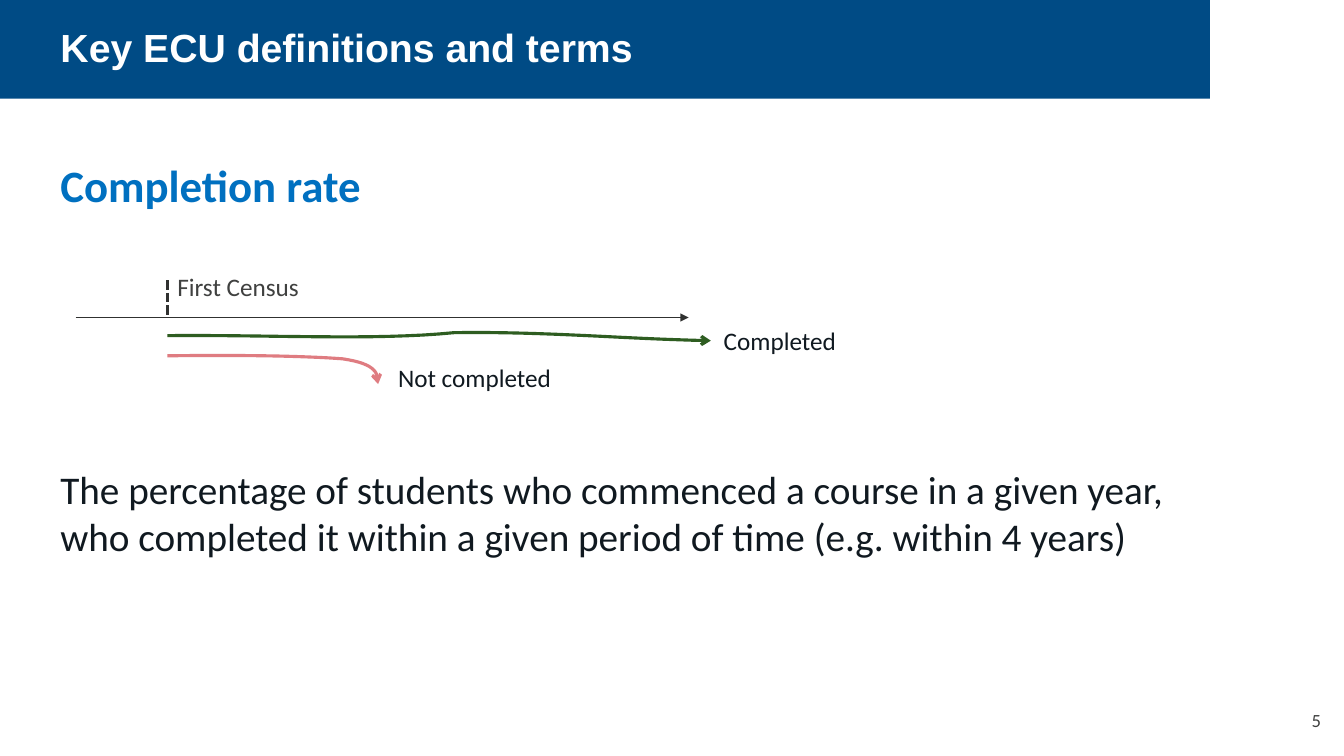
"""Build the completion rate definition slide."""
from dataclasses import dataclass

import lxml.etree
import pptx
import pptx.dml.color
import pptx.enum.dml
import pptx.enum.shapes
import pptx.enum.text
import pptx.oxml.ns
import pptx.util

Inches = pptx.util.Inches
Align = pptx.enum.text.PP_ALIGN
Point = tuple[float, float]

COLOURS = {
    "band": "004B85",
    "white": "FFFFFF",
    "heading": "0070C0",
    "body": "101920",
    "grey": "404140",
    "axis": "303130",
    "completed": "2E5D21",
    "not completed": "DF7C81",
}
CURVE_STEPS = 16


@dataclass
class Label:
    text: str
    left: float
    top: float
    width: float
    height: float
    size: float = 18
    colour: str = "body"
    bold: bool = False
    align: Align = Align.LEFT
    space_after: float = 0


@dataclass
class Pathway:
    colour: str
    start: Point
    beziers: list[tuple[Point, Point, Point]]


@dataclass
class Rule:
    start: Point
    end: Point
    width: float
    dashed: bool = False
    head: str = ""


LABELS = [
    Label("5", 12.5, 6.98, 0.7, 0.33, size=13.3, colour="grey", align=Align.RIGHT),
    Label("The percentage of students who commenced a course in a given year, \v"
          "who completed it within a given period of time (e.g. within 4 years)",
          0.5, 4.57, 12.36, 1.04, size=28, space_after=12),
    Label("First Census", 1.66, 2.64, 1.99, 0.4, colour="grey"),
    Label("Completed", 7.08, 3.18, 1.43, 0.41),
    Label("Not completed", 3.85, 3.54, 1.89, 0.41),
    Label("Completion rate", 0.5, 1.52, 8.24, 0.64, size=32, colour="heading", bold=True),
]
PATHWAYS = [
    Pathway("completed", (1.66, 3.33), [
        ((2.67, 3.32), (3.71, 3.38), (4.51, 3.3)),
        ((5.48, 3.29), (6.12, 3.36), (7.05, 3.38)),
    ]),
    Pathway("not completed", (1.66, 3.53), [
        ((2.33, 3.52), (3.02, 3.53), (3.4, 3.56)),
        ((3.74, 3.61), (3.75, 3.71), (3.75, 3.81)),
    ]),
]
RULES = [
    Rule((0.75, 3.15), (6.83, 3.15), 0.5, head="triangle"),
    Rule((1.66, 2.78), (1.66, 3.15), 2.25, dashed=True),
]


def colour(name: str) -> pptx.dml.color.RGBColor:
    return pptx.dml.color.RGBColor.from_string(COLOURS[name])


def write(frame, text: str, *, size: float, ink: str, font: str = "Calibri",
          bold: bool = False, align: Align = Align.LEFT,
          space_after: float = 0, line_spacing: float = 1.0) -> None:
    para = frame.paragraphs[0]
    para.text = text
    para.alignment = align
    para.space_before = pptx.util.Pt(0)
    para.space_after = pptx.util.Pt(space_after)
    para.line_spacing = line_spacing
    for span in para.runs:
        span.font.name = font
        span.font.size = pptx.util.Pt(size)
        span.font.bold = bold
        span.font.color.rgb = colour(ink)


def style_line(line, ink: str, width: float, head: str = "") -> None:
    line.color.rgb = colour(ink)
    line.width = pptx.util.Pt(width)
    if head:
        outline = line.color._xFill.getparent()
        lxml.etree.SubElement(outline, pptx.oxml.ns.qn("a:tailEnd"), type=head)


def add_title(page) -> None:
    title = page.shapes.title
    title.left, title.top = Inches(0.5), Inches(0)
    title.width, title.height = Inches(11.5), Inches(0.98)
    frame = title.text_frame
    frame.auto_size = pptx.enum.text.MSO_AUTO_SIZE.NONE
    frame.vertical_anchor = pptx.enum.text.MSO_ANCHOR.MIDDLE
    write(frame, "Key ECU definitions and terms", size=28, ink="white",
          font="Arial", bold=True, line_spacing=0.9)

    band = page.shapes.add_shape(pptx.enum.shapes.MSO_SHAPE.RECTANGLE,
                                 0, 0, Inches(12), Inches(0.98))
    band.shadow.inherit = False
    band.fill.solid()
    band.fill.fore_color.rgb = colour("band")
    band.line.fill.background()
    title.element.addprevious(band.element)


def add_label(page, label: Label) -> None:
    box = page.shapes.add_textbox(Inches(label.left), Inches(label.top),
                                  Inches(label.width), Inches(label.height))
    box.text_frame.word_wrap = True
    box.text_frame.auto_size = pptx.enum.text.MSO_AUTO_SIZE.SHAPE_TO_FIT_TEXT
    write(box.text_frame, label.text, size=label.size, ink=label.colour,
          bold=label.bold, align=label.align, space_after=label.space_after)


def bezier_point(corners: tuple[Point, ...], t: float) -> Point:
    weights = ((1 - t) ** 3, 3 * t * (1 - t) ** 2, 3 * t ** 2 * (1 - t), t ** 3)
    x, y = (sum(w * c[axis] for w, c in zip(weights, corners)) for axis in (0, 1))
    return Inches(x), Inches(y)


def add_pathway(page, pathway: Pathway) -> None:
    points = []
    start = pathway.start
    for bezier in pathway.beziers:
        points += [bezier_point((start, *bezier), step / CURVE_STEPS)
                   for step in range(1, CURVE_STEPS + 1)]
        start = bezier[-1]
    builder = page.shapes.build_freeform(*map(Inches, pathway.start))
    builder.add_line_segments(points, close=False)
    curve = builder.convert_to_shape()
    curve.shadow.inherit = False
    curve.fill.background()
    style_line(curve.line, pathway.colour, 2.25, "arrow")


def add_rule(page, rule: Rule) -> None:
    connector = page.shapes.add_connector(pptx.enum.shapes.MSO_CONNECTOR.STRAIGHT,
                                          *map(Inches, rule.start + rule.end))
    style_line(connector.line, "axis", rule.width, rule.head)
    if rule.dashed:
        connector.line.dash_style = pptx.enum.dml.MSO_LINE.SQUARE_DOT
    properties = connector.element.find(pptx.oxml.ns.qn("p:spPr"))
    lxml.etree.SubElement(properties, pptx.oxml.ns.qn("a:effectLst"))


def main() -> None:
    deck = pptx.Presentation()
    deck.slide_width, deck.slide_height = Inches(13.33), Inches(7.5)
    page = deck.slides.add_slide(deck.slide_layouts.get_by_name("Title Only"))
    add_title(page)
    for pathway in PATHWAYS:
        add_pathway(page, pathway)
    for rule in RULES:
        add_rule(page, rule)
    for label in LABELS:
        add_label(page, label)
    deck.save("out.pptx")


if __name__ == "__main__":
    main()
